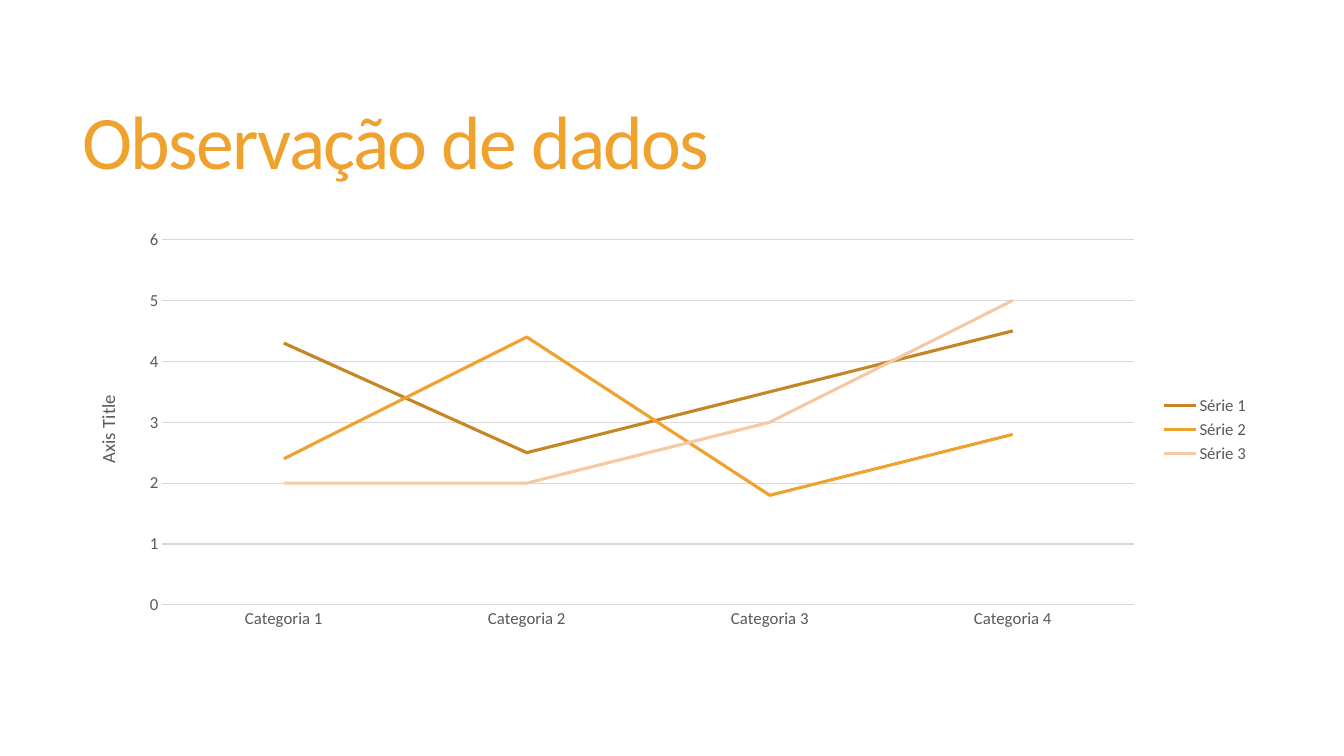
from lxml import etree
from pptx import Presentation
from pptx import util as u
from pptx.chart import data as chart_data
from pptx.dml.color import RGBColor
from pptx.enum import chart as chart_enum
from pptx.enum import text
from pptx.oxml import ns

ORANGE = RGBColor(0xF0, 0xA2, 0x2E)
BROWN = RGBColor(0xC7, 0x86, 0x26)
PEACH = RGBColor(0xF5, 0xC9, 0xA4)
GRAY = RGBColor(0x59, 0x59, 0x59)
LIGHT_GRAY = RGBColor(0xD9, 0xD9, 0xD9)
FONT = "Calibri"


def write_text(frame, content, size, color, spacing=None, line_spacing=None):
    paragraph = frame.paragraphs[0]
    paragraph.line_spacing = line_spacing
    run = paragraph.add_run()
    run.text = content
    format_font(run.font, size, color)
    if spacing is not None:
        run._r.get_or_add_rPr().set("spc", str(int(spacing * 100)))


def format_font(font, size, color):
    font.name = FONT
    font.size = u.Pt(size)
    font.bold = False
    font.color.rgb = color


presentation = Presentation()
presentation.slide_width = u.Pt(960)
presentation.slide_height = u.Pt(540)
slide = presentation.slides.add_slide(presentation.slide_layouts[6])

# Title
title = slide.shapes.add_textbox(u.Pt(51.8), u.Pt(39.6), u.Pt(848.2), u.Pt(130.3))
title.text_frame.word_wrap = True
title.text_frame.vertical_anchor = text.MSO_ANCHOR.MIDDLE
write_text(title.text_frame, "Observação de dados", size=54, color=ORANGE,
           spacing=-1.2, line_spacing=0.85)

# Chart data
series_rows = [
    ("Série 1", (4.3, 2.5, 3.5, 4.5), BROWN),
    ("Série 2", (2.4, 4.4, 1.8, 2.8), ORANGE),
    ("Série 3", (2, 2, 3, 5), PEACH),
]
data = chart_data.CategoryChartData()
data.categories = [f"Categoria {number}" for number in range(1, 5)]
for name, values, color in series_rows:
    data.add_series(name, values)

# Line chart
chart = slide.shapes.add_chart(
    chart_enum.XL_CHART_TYPE.LINE, u.Pt(53.3), u.Pt(158.4), u.Pt(846.7), u.Pt(296.6), data
).chart
chart.has_title = False
format_font(chart.font, 12, GRAY)
plot = chart.plots[0]
plot.vary_by_categories = False
for series, (name, values, color) in zip(plot.series, series_rows):
    series.smooth = False
    series.marker.style = chart_enum.XL_MARKER_STYLE.NONE
    series.format.line.color.rgb = color
    series.format.line.width = u.Pt(2.25)

# Axes
category_axis, value_axis = chart.category_axis, chart.value_axis
for axis in (category_axis, value_axis):
    axis.major_tick_mark = chart_enum.XL_TICK_MARK.NONE
    axis.minor_tick_mark = chart_enum.XL_TICK_MARK.NONE
    format_font(axis.tick_labels.font, 12, GRAY)
value_axis.minimum_scale = 0
value_axis.maximum_scale = 6
value_axis.major_unit = 1
value_axis.format.line.fill.background()
for line in (category_axis.format.line, value_axis.major_gridlines.format.line):
    line.color.rgb = LIGHT_GRAY
    line.width = u.Pt(0.75)
axis_title = value_axis.axis_title.text_frame
write_text(axis_title, "Axis Title", size=13.3, color=GRAY)
body = axis_title._txBody.find(ns.qn("a:bodyPr"))
body.set("rot", "-5400000")
body.set("vert", "horz")

# Legend
chart.has_legend = True
chart.legend.position = chart_enum.XL_LEGEND_POSITION.RIGHT
chart.legend.include_in_layout = False
format_font(chart.legend.font, 12, GRAY)

# Plot area position, as fractions of the chart
plot_area = chart._chartSpace.find(".//" + ns.qn("c:plotArea"))
for old_layout in plot_area.findall(ns.qn("c:layout")):
    plot_area.remove(old_layout)
layout = etree.Element(ns.qn("c:layout"))
manual = etree.SubElement(layout, ns.qn("c:manualLayout"))
for tag, value in (("layoutTarget", "inner"), ("xMode", "edge"), ("yMode", "edge"),
                   ("x", "0.074"), ("y", "0.043"), ("w", "0.82"), ("h", "0.88")):
    etree.SubElement(manual, ns.qn("c:" + tag)).set("val", value)
plot_area.insert(0, layout)

presentation.save("out.pptx")
